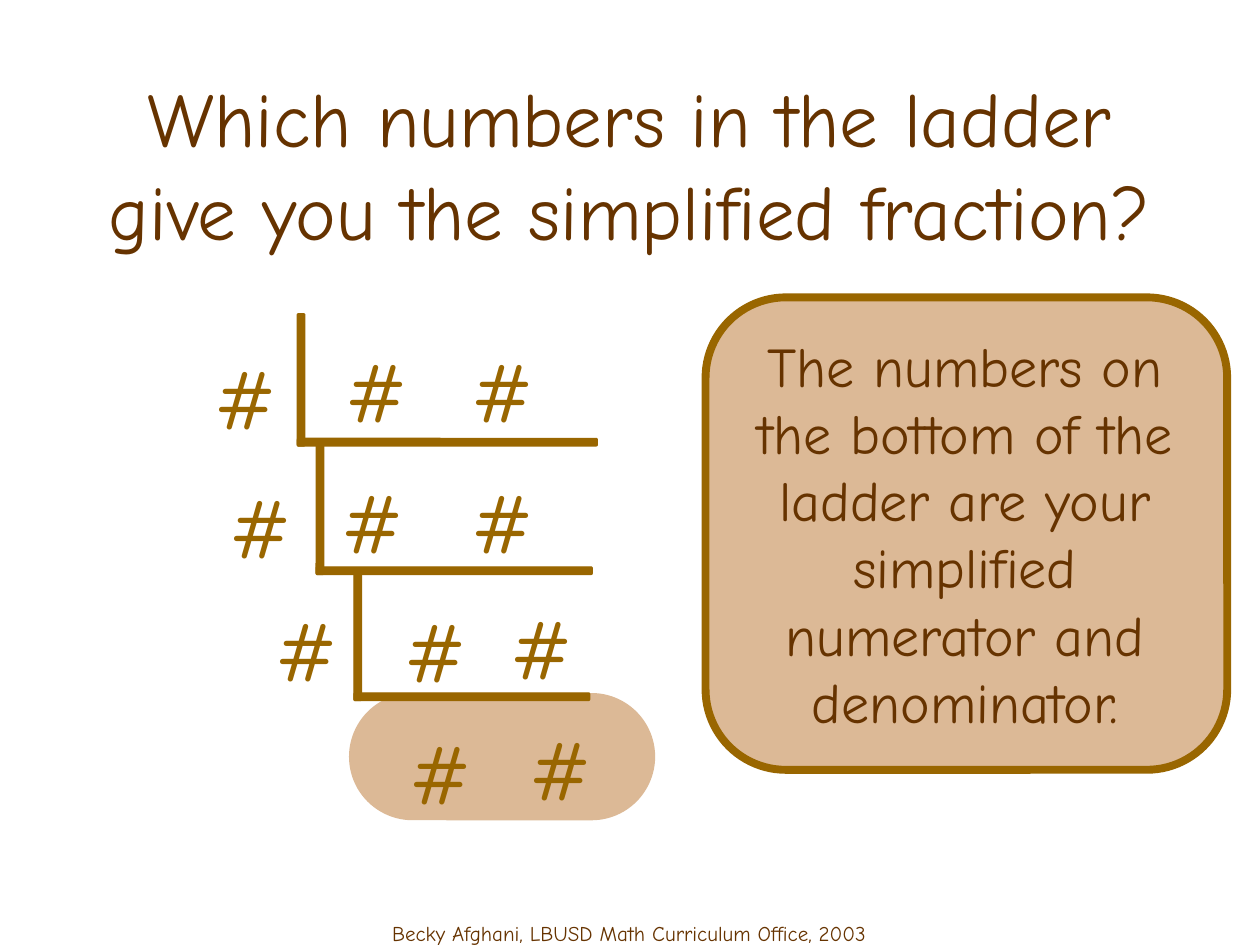
import lxml.etree
import pptx
import pptx.dml.color
import pptx.enum.shapes
import pptx.enum.text
import pptx.oxml.ns
import pptx.util

BROWN = pptx.dml.color.RGBColor(0x66, 0x33, 0x00)
OCHRE = pptx.dml.color.RGBColor(0x99, 0x66, 0x00)
TAN = pptx.dml.color.RGBColor(0xDC, 0xB9, 0x96)
FONT = "Comic Neue"
COLUMNS, ROWS = 100, 75

TOP = pptx.enum.text.MSO_ANCHOR.TOP
MIDDLE = pptx.enum.text.MSO_ANCHOR.MIDDLE
GROW = pptx.enum.text.MSO_AUTO_SIZE.SHAPE_TO_FIT_TEXT
FIXED = pptx.enum.text.MSO_AUTO_SIZE.NONE
ROUNDED = pptx.enum.shapes.MSO_SHAPE.ROUNDED_RECTANGLE

BAR = 0.6
SIGN_HEIGHT = 6.8
RUNGS = [(23.6, 24.9, 23.8), (25.1, 35.1, 21.9), (28.1, 45.1, 18.7)]
SIGNS = [
    (16.4, 26.9, 6.1), (26.8, 26.4, 6.1), (36.6, 26.4, 6.5),
    (17.9, 37.2, 5.6), (26.8, 36.8, 5.6), (36.6, 36.8, 6.5),
    (21.5, 46.9, 5.6), (31.8, 47, 5.6), (39.7, 46.8, 6.5),
    (32.2, 56.7, 5.6), (41.7, 56.4, 5.6),
]


class LadderSlide:
    def __init__(self, deck):
        self.column = deck.slide_width / COLUMNS
        self.row = deck.slide_height / ROWS
        self.page = deck.slides.add_slide(deck.slide_layouts[5])

    def area(self, left, top, width, height):
        return [int(left * self.column), int(top * self.row),
                int(width * self.column), int(height * self.row)]

    def fill_text(self, box, text, size, color, **frame_format):
        frame = box.text_frame
        frame_values = {"word_wrap": True, "auto_size": FIXED,
                        "vertical_anchor": TOP, **frame_format}
        for name, value in frame_values.items():
            setattr(frame, name, value)
        para = frame.paragraphs[0]
        para.alignment = pptx.enum.text.PP_ALIGN.CENTER
        span = para.add_run()
        span.text = text
        for name, value in {"name": FONT, "size": pptx.util.Pt(size)}.items():
            setattr(span.font, name, value)
        span.font.color.rgb = color
        return span

    def title(self, text, place):
        box = self.page.shapes.title
        box.left, box.top, box.width, box.height = self.area(*place)
        self.fill_text(box, text, 44, BROWN, vertical_anchor=MIDDLE)

    def text(self, text, place, size, color=BROWN, shapes=None, **frame_format):
        shapes = shapes or self.page.shapes
        box = shapes.add_textbox(*self.area(*place))
        return self.fill_text(box, text, size, color, **frame_format)

    def rounded(self, place, fill, corner, line=None, rotation=0, shapes=None):
        shapes = shapes or self.page.shapes
        box = shapes.add_shape(ROUNDED, *self.area(*place))
        box.adjustments[0] = corner
        box.rotation = rotation
        box.shadow.inherit = False
        box.fill.solid()
        box.fill.fore_color.rgb = fill
        if line:
            box.line.color.rgb = OCHRE
            box.line.width = pptx.util.Pt(line)
        else:
            box.line.fill.background()

    def rung(self, left, top, length):
        rise = 10.5
        middle = left + length / 2
        center = top + rise - BAR / 2
        self.rounded((left, top, BAR, rise), OCHRE, 0.17, 0.75)
        self.rounded((middle - BAR / 2, center - length / 2, BAR, length),
                     OCHRE, 0.17, 0.75, rotation=90)

    def sign(self, left, top, width):
        span = self.text("#", (left, top, width, SIGN_HEIGHT), 48, OCHRE,
                         word_wrap=False)
        qn = pptx.oxml.ns.qn
        outline = lxml.etree.Element(qn("a:ln"), w=str(pptx.util.Pt(0.75)))
        fill = lxml.etree.SubElement(outline, qn("a:solidFill"))
        lxml.etree.SubElement(fill, qn("a:srgbClr"), val=str(BROWN))
        span.font._element.insert(0, outline)

    def card(self, text, place, text_place):
        shapes = self.page.shapes.add_group_shape().shapes
        self.rounded(place, TAN, 0.17, 4.5, shapes=shapes)
        self.text(text, text_place, 32, shapes=shapes, auto_size=GROW)


def main():
    deck = pptx.Presentation()
    deck.slide_width = pptx.util.Inches(10)
    deck.slide_height = pptx.util.Inches(7.5)
    slide = LadderSlide(deck)
    slide.title("Which numbers in the ladder give you the simplified fraction?",
                (7.5, 6.7, 85, 12.5))
    slide.text("Becky Afghani, LBUSD Math Curriculum Office, 2003",
               (7.8, 72.6, 84.3, 5), 12)
    slide.rounded((34.8, 47.9, 10.1, 24.3), TAN, 0.5, rotation=270)
    for rung in RUNGS:
        slide.rung(*rung)
    for sign in SIGNS:
        slide.sign(*sign)
    slide.card("The numbers on the bottom of the ladder are your simplified "
               "numerator and denominator.",
               (56, 23.6, 41.4, 37.5), (59.1, 25.8, 35, 33))
    deck.save("out.pptx")


if __name__ == "__main__":
    main()
